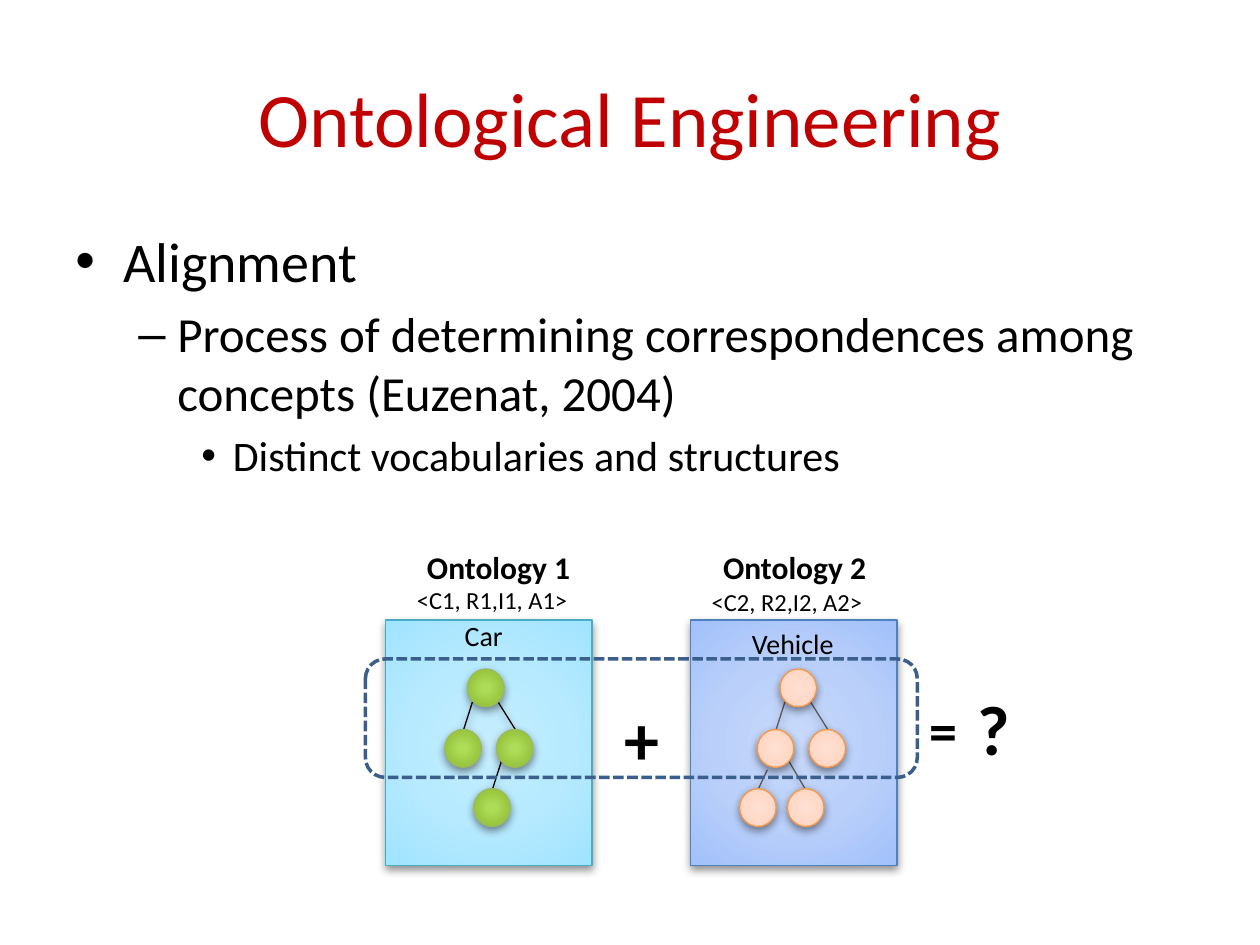
from pptx import Presentation
from pptx.dml.color import RGBColor
from pptx.enum.dml import MSO_LINE as Dash
from pptx.enum.shapes import MSO_CONNECTOR as Link, MSO_SHAPE as Geom
from pptx.enum.text import MSO_ANCHOR as Anchor, MSO_AUTO_SIZE as Fit, PP_ALIGN as Align
from pptx.oxml import parse_xml
from pptx.oxml.ns import nsdecls
from pptx.util import Pt

PX = 9144  # 100 px to the inch
COLORS = {"title": "C00000", "text": "000000", "frame": "3A5F8C"}

deck = Presentation()
deck.slide_width, deck.slide_height = 1000 * PX, 750 * PX
slide = deck.slides.add_slide(deck.slide_layouts[6])
shapes = slide.shapes


def add_text(box, paragraphs, bold=False, color="text", wrap=False):
    """Add a text box with one run for each (words, size) paragraph."""
    frame = shapes.add_textbox(*(n * PX for n in box)).text_frame
    frame.word_wrap = wrap
    frame.auto_size = Fit.NONE if wrap else Fit.SHAPE_TO_FIT_TEXT
    for i, (words, size) in enumerate(paragraphs):
        para = frame.paragraphs[0] if i == 0 else frame.add_paragraph()
        run = para.add_run()
        run.text = words
        run.font.name, run.font.size, run.font.bold = "Calibri", Pt(size), bold
        run.font.color.rgb = RGBColor.from_string(COLORS[color])
    return frame


def finish(item, line, stops=()):
    """Give a thin line, a soft shadow and, with stops, a radial gradient."""
    item.line.color.rgb = RGBColor.from_string(line)
    item.line.width = Pt(0.75)
    props = item._element.spPr
    if stops:
        marks = "".join(f'<a:gs pos="{pos * 1000}"><a:srgbClr val="{color}"/></a:gs>'
                        for pos, color in stops)
        props.insert(2, parse_xml(
            f'<a:gradFill {nsdecls("a")} rotWithShape="1"><a:gsLst>{marks}</a:gsLst>'
            '<a:path path="circle"><a:fillToRect l="50000" t="50000" r="50000" b="50000"/>'
            '</a:path></a:gradFill>'))
    props.append(parse_xml(
        f'<a:effectLst {nsdecls("a")}><a:outerShdw blurRad="{Pt(5)}" dist="{Pt(2)}" '
        'dir="5400000" rotWithShape="0"><a:srgbClr val="000000"><a:alpha val="43000"/>'
        '</a:srgbClr></a:outerShdw></a:effectLst>'))


# Title
title = add_text((50, 30, 900, 125), [("Ontological Engineering", 44)], color="title", wrap=True)
title.vertical_anchor = Anchor.MIDDLE
title.paragraphs[0].alignment = Align.CENTER

# Bulleted definition: left margin and hanging indent for each level
body = add_text((50, 175, 900, 495), [
    ("Alignment", 32),
    ("Process of determining correspondences among concepts (Euzenat, 2004)", 28),
    ("Distinct vocabularies and structures", 24),
], wrap=True)
levels = [(38, 38, "•"), (81, 31, "–"), (125, 25, "•")]
for level, (para, (margin, hang, bullet)) in enumerate(zip(body.paragraphs, levels)):
    para.level = level
    para.space_before = Pt(para.runs[0].font.size.pt * 0.2)
    para_props = para._p.get_or_add_pPr()
    para_props.set("marL", str(margin * PX))
    para_props.set("indent", str(-hang * PX))
    para_props.append(parse_xml(f'<a:buFont {nsdecls("a")} typeface="Arial"/>'))
    para_props.append(parse_xml(f'<a:buChar {nsdecls("a")} char="{bullet}"/>'))

# Ontologies: panel and concept tree; tree places are relative to the root node
ontologies = [
    {"panel": 306, "root": 371, "panel_line": "4BACC6", "node_line": "9BBB59", "link": "000000",
     "panel_fill": [(0, "C5EDFE"), (50, "B7EAFF"), (97, "A1E4FF"), (100, "9BE3FF")],
     "node_fill": [(0, "AEDD58"), (15, "ADDC58"), (62, "9BC842"), (97, "8AB535"), (100, "88B42C")],
     "leaves": [5], "leaf_links": [(27, 73, 20, 95)]},
    {"panel": 548, "root": 619, "panel_line": "4F81BD", "node_line": "F79646", "link": "595959",
     "panel_fill": [(0, "C8D9FA"), (50, "BAD0FA"), (97, "A3C1FA"), (100, "99BCFD")],
     "node_fill": [(0, "FFE0D3"), (50, "FFDAC9"), (97, "FFCFB8"), (100, "FFCBB3")],
     "leaves": [6, -32], "leaf_links": [(7, 73, 20, 95), (-10, 80, -17, 95)]},
]
ROOT_TOP = 531
root_links = [(4, 26, -3, 48), (23, 24, 38, 48)]
upper_nodes = [(0, 0), (-18, 48), (23, 48)]
for onto in ontologies:
    panel = shapes.add_shape(Geom.RECTANGLE, onto["panel"] * PX, 492 * PX, 164 * PX, 195 * PX)
    finish(panel, onto["panel_line"], onto["panel_fill"])
    for x1, y1, x2, y2 in root_links + onto["leaf_links"]:
        link = shapes.add_connector(
            Link.STRAIGHT, (onto["root"] + x1) * PX, (ROOT_TOP + y1) * PX,
            (onto["root"] + x2) * PX, (ROOT_TOP + y2) * PX)
        finish(link, onto["link"])
    for x, y in upper_nodes + [(leaf, 95) for leaf in onto["leaves"]]:
        node = shapes.add_shape(Geom.OVAL, (onto["root"] + x) * PX, (ROOT_TOP + y) * PX,
                                29 * PX, 30 * PX)
        finish(node, onto["node_line"], onto["node_fill"])

# Labels and operators
labels = [
    ("+", (486, 547, 48, 77), 40, True),
    ("=", (728, 547, 43, 64), 32, True),
    ("?", (766, 539, 46, 77), 40, True),
    ("Car", (359, 486, 56, 37), 16, False),
    ("Vehicle", (587, 492, 86, 37), 16, False),
    ("Ontology 1", (329, 430, 135, 40), 18, True),
    ("Ontology 2", (564, 430, 135, 40), 18, True),
    ("<C1, R1,I1, A1>", (321, 459, 141, 34), 14, False),
    ("<C2, R2,I2, A2>", (555, 461, 141, 34), 14, False),
]
for words, box, size, bold in labels:
    add_text(box, [(words, size)], bold)

# Dashed frame around the aligned concepts
matched = shapes.add_shape(Geom.FLOWCHART_ALTERNATE_PROCESS,
                           290 * PX, 523 * PX, 438 * PX, 94 * PX)
matched.shadow.inherit = False
matched.fill.background()
matched.line.color.rgb = RGBColor.from_string(COLORS["frame"])
matched.line.width = Pt(2)
matched.line.dash_style = Dash.SQUARE_DOT

deck.save("out.pptx")
